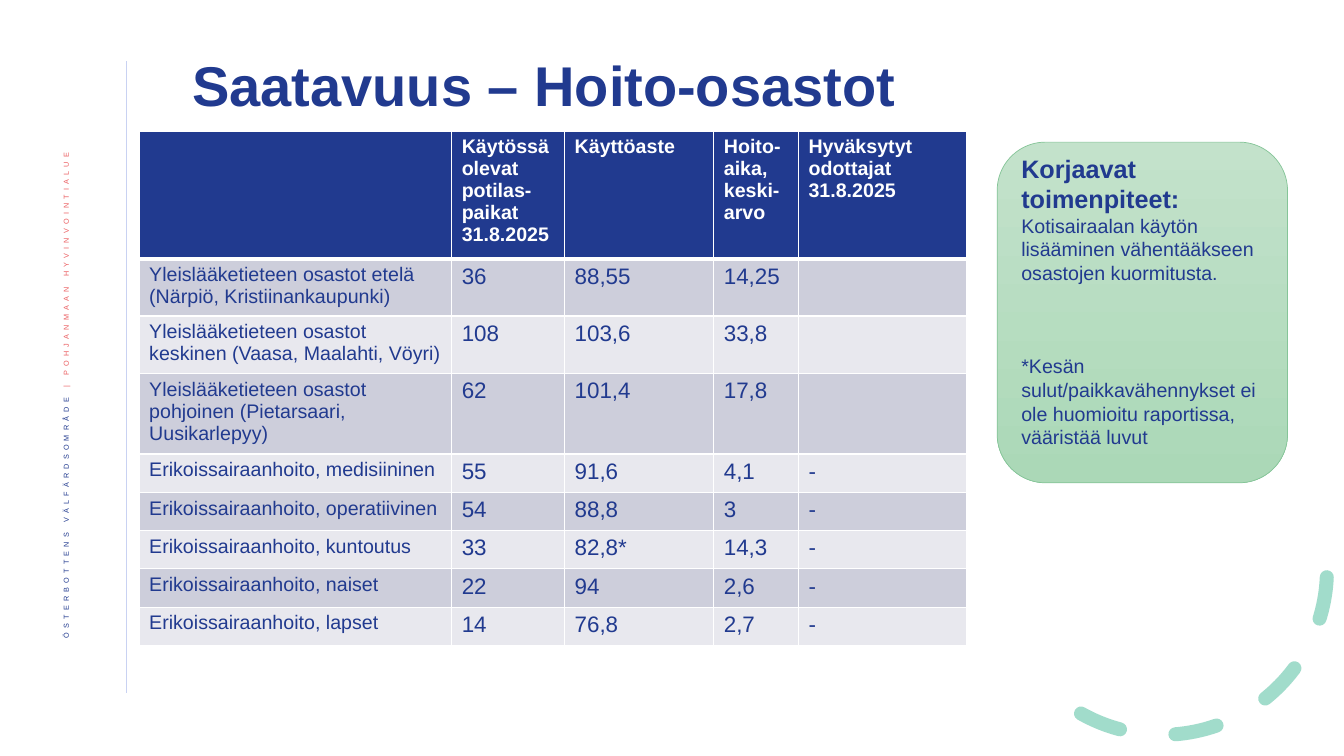
from dataclasses import dataclass
from typing import Any

from lxml import etree
from pptx import Presentation
from pptx import util as u
from pptx.dml.color import RGBColor
from pptx.enum import dml, shapes, text
from pptx.oxml import ns

PX = 9144
NAVY = RGBColor(0x21, 0x3A, 0x8F)
CORAL = RGBColor(0xEB, 0x5C, 0x5F)
WHITE = RGBColor(0xFF, 0xFF, 0xFF)
RULE = RGBColor(0xC9, 0xD2, 0xF2)
TEAL = RGBColor(0x00, 0xA1, 0x74)
MINT = RGBColor(0xC3, 0xE2, 0xCB)
SAGE = RGBColor(0xAB, 0xD8, 0xB7)
EDGE = RGBColor(0x85, 0xC5, 0x98)
BANDS = (RGBColor(0xE8, 0xE8, 0xEE), RGBColor(0xCD, 0xCE, 0xDB))


@dataclass
class Column:
    head: str
    width: int
    size: int


@dataclass
class Ward:
    height: int
    cells: tuple[str, ...]


@dataclass
class Note:
    words: str
    size: int
    bold: bool
    before: int


COLUMNS = (
    Column("", 310, 14),
    Column("Käytössä olevat potilas-paikat 31.8.2025", 112, 16),
    Column("Käyttöaste", 148, 16),
    Column("Hoito-aika, keski-arvo", 84, 16),
    Column("Hyväksytyt odottajat 31.8.2025", 167, 16),
)
HEAD = 98
WARDS = (
    Ward(55, ("Yleislääketieteen osastot etelä (Närpiö, Kristiinankaupunki)",
              "36", "88,55", "14,25", "")),
    Ward(31, ("Yleislääketieteen osastot keskinen (Vaasa, Maalahti, Vöyri)",
              "108", "103,6", "33,8", "")),
    Ward(27, ("Yleislääketieteen osastot pohjoinen (Pietarsaari, Uusikarlepyy)",
              "62", "101,4", "17,8", "")),
    Ward(38, ("Erikoissairaanhoito, medisiininen", "55", "91,6", "4,1", "-")),
    Ward(38, ("Erikoissairaanhoito, operatiivinen", "54", "88,8", "3", "-")),
    Ward(38, ("Erikoissairaanhoito, kuntoutus", "33", "82,8*", "14,3", "-")),
    Ward(38, ("Erikoissairaanhoito, naiset", "22", "94", "2,6", "-")),
    Ward(38, ("Erikoissairaanhoito, lapset", "14", "76,8", "2,7", "-")),
)
NOTES = (
    Note("Korjaavat toimenpiteet:", 18, True, 0),
    Note("Kotisairaalan käytön lisääminen vähentääkseen osastojen kuormitusta.",
         14, False, 0),
    Note("*Kesän sulut/paikkavähennykset ei ole huomioitu raportissa, "
         "vääristää luvut", 14, False, 50),
)


def px(*sides: int) -> list[u.Emu]:
    return [u.Emu(side * PX) for side in sides]


def assign(target: Any, values: dict[str, Any]) -> None:
    for key, value in values.items():
        setattr(target, key, value)


def write(para: Any, words: str, size: int, color: RGBColor,
          bold: bool = False) -> Any:
    run = para.add_run()
    run.text = words
    assign(run.font, {"name": "Arial", "size": u.Pt(size), "bold": bold})
    run.font.color.rgb = color
    return run


def child(parent: Any, tag: str, **attrs: str) -> Any:
    return etree.SubElement(parent, ns.qn(tag), attrs)


def border(cell: Any, base: int) -> None:
    props = cell._tc.get_or_add_tcPr()
    for side, width in (("L", 1), ("R", 1), ("T", 1), ("B", base)):
        line = child(props, f"a:ln{side}", w=str(u.Pt(width)))
        child(child(line, "a:solidFill"), "a:srgbClr", val=str(WHITE))


def fill(cell: Any, words: str, size: int, ink: RGBColor, back: RGBColor,
         head: bool) -> None:
    border(cell, 3 if head else 1)
    cell.fill.solid()
    cell.fill.fore_color.rgb = back
    para = cell.text_frame.paragraphs[0]
    if words:
        write(para, words, size, ink, head)
    else:
        para.font.size = u.Pt(size)


def box(slide: Any, *place: int) -> Any:
    frame = slide.shapes.add_textbox(*px(*place)).text_frame
    assign(frame, {"word_wrap": True,
                   "vertical_anchor": text.MSO_ANCHOR.MIDDLE})
    frame.paragraphs[0].line_spacing = 0.9
    return frame


def draw_side(slide: Any) -> None:
    rule = slide.shapes.add_connector(
        shapes.MSO_CONNECTOR.STRAIGHT, *px(125, 61, 125, 688))
    rule.line.color.rgb = RULE
    rule.line.width = u.Pt(0.5)
    child(rule._element.spPr, "a:effectLst")
    frame = box(slide, 42, 142, 52, 573)
    frame._txBody.bodyPr.set("vert", "vert270")
    para = frame.paragraphs[0]
    para.alignment = text.PP_ALIGN.RIGHT
    for words, color in (("ÖSTERBOTTENS VÄLFÄRDSOMRÅDE ", NAVY),
                         ("| POHJANMAAN HYVINVOINTIALUE", CORAL)):
        props = write(para, words, 9, color)._r.get_or_add_rPr()
        props.set("baseline", "30000")
        props.set("spc", "300")


def draw_arc(slide: Any) -> None:
    arc = slide.shapes.add_shape(
        shapes.MSO_SHAPE.ARC, *px(989, 402, 327, 327))
    arc.shadow.inherit = False
    arc.rotation = 98.9
    for spot, angle in enumerate((158.17, 17.81)):
        arc.adjustments[spot] = angle
    arc.fill.background()
    arc.line.color.rgb = TEAL
    assign(arc.line, {"width": u.Pt(10),
                      "dash_style": dml.MSO_LINE.DASH})
    line = arc.line._ln
    line.set("cap", "rnd")
    child(line.find(".//" + ns.qn("a:srgbClr")), "a:alpha", val="36000")


def draw_table(slide: Any) -> None:
    heights = [HEAD] + [ward.height for ward in WARDS]
    widths = [col.width for col in COLUMNS]
    table = slide.shapes.add_table(
        len(heights), len(widths),
        *px(138, 130, sum(widths), sum(heights))).table
    table.horz_banding = False
    for row, height in zip(table.rows, px(*heights)):
        row.height = height
    for spot, col in enumerate(COLUMNS):
        table.columns[spot].width = px(col.width)[0]
        fill(table.cell(0, spot), col.head, 14, WHITE, NAVY, True)
        for line, ward in enumerate(WARDS, 1):
            fill(table.cell(line, spot), ward.cells[spot], col.size,
                 NAVY, BANDS[line % 2], False)


def draw_panel(slide: Any) -> None:
    panel = slide.shapes.add_shape(
        shapes.MSO_SHAPE.ROUNDED_RECTANGLE, *px(989, 141, 288, 338))
    panel.shadow.inherit = False
    panel.fill.gradient()
    panel.fill.gradient_angle = 270
    for stop, color in zip(panel.fill.gradient_stops, (MINT, SAGE)):
        stop.color.rgb = color
    panel.line.color.rgb = EDGE
    panel.line.width = u.Pt(0.5)
    frame = panel.text_frame
    assign(frame, {"word_wrap": True, "margin_top": 0,
                   "margin_bottom": px(23)[0],
                   "vertical_anchor": text.MSO_ANCHOR.MIDDLE})
    for spot, note in enumerate(NOTES):
        para = frame.add_paragraph() if spot else frame.paragraphs[0]
        assign(para, {"alignment": text.PP_ALIGN.LEFT,
                      "space_before": u.Pt(note.before)})
        write(para, note.words, note.size, NAVY, note.bold)


def main() -> None:
    deck = Presentation()
    deck.slide_width, deck.slide_height = px(1333, 750)
    slide = deck.slides.add_slide(deck.slide_layouts[6])
    draw_side(slide)
    draw_arc(slide)
    title = box(slide, 181, 45, 1020, 85)
    write(title.paragraphs[0], "Saatavuus – Hoito-osastot", 40, NAVY, True)
    draw_table(slide)
    draw_panel(slide)
    deck.save("out.pptx")


if __name__ == "__main__":
    main()
